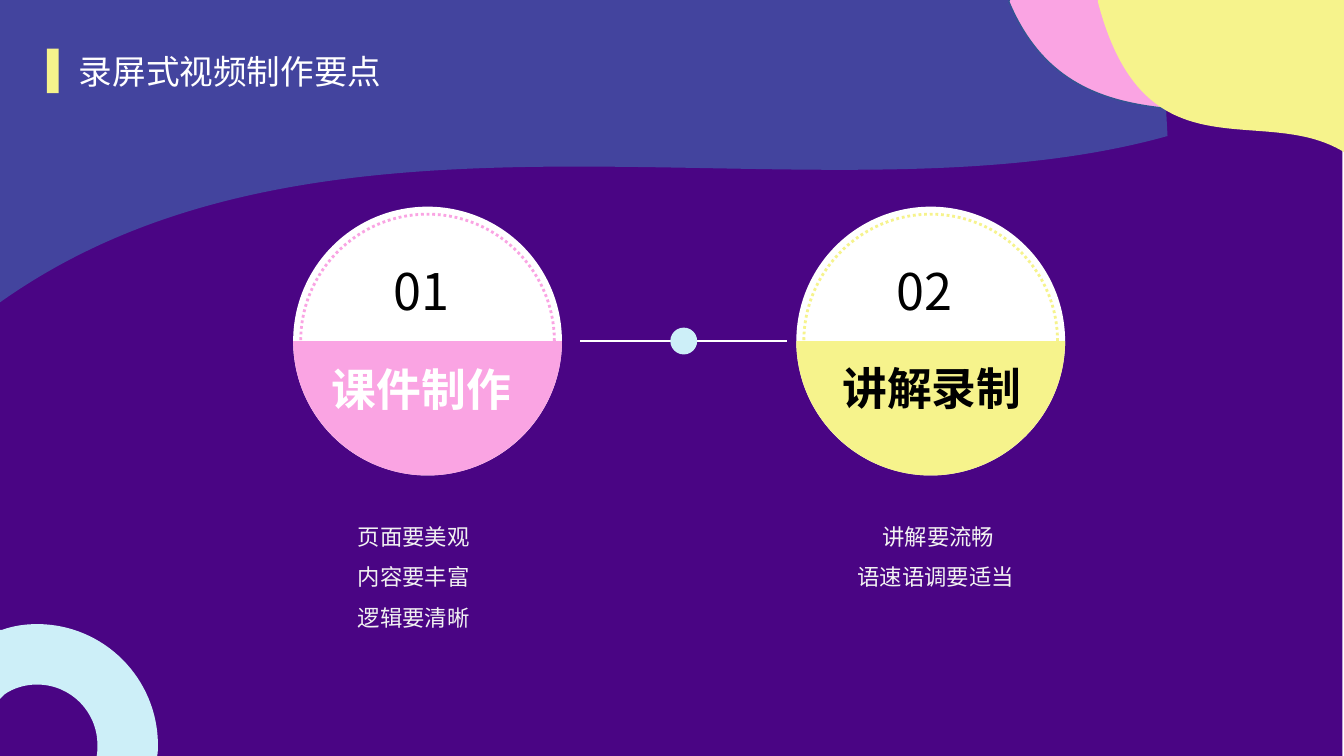
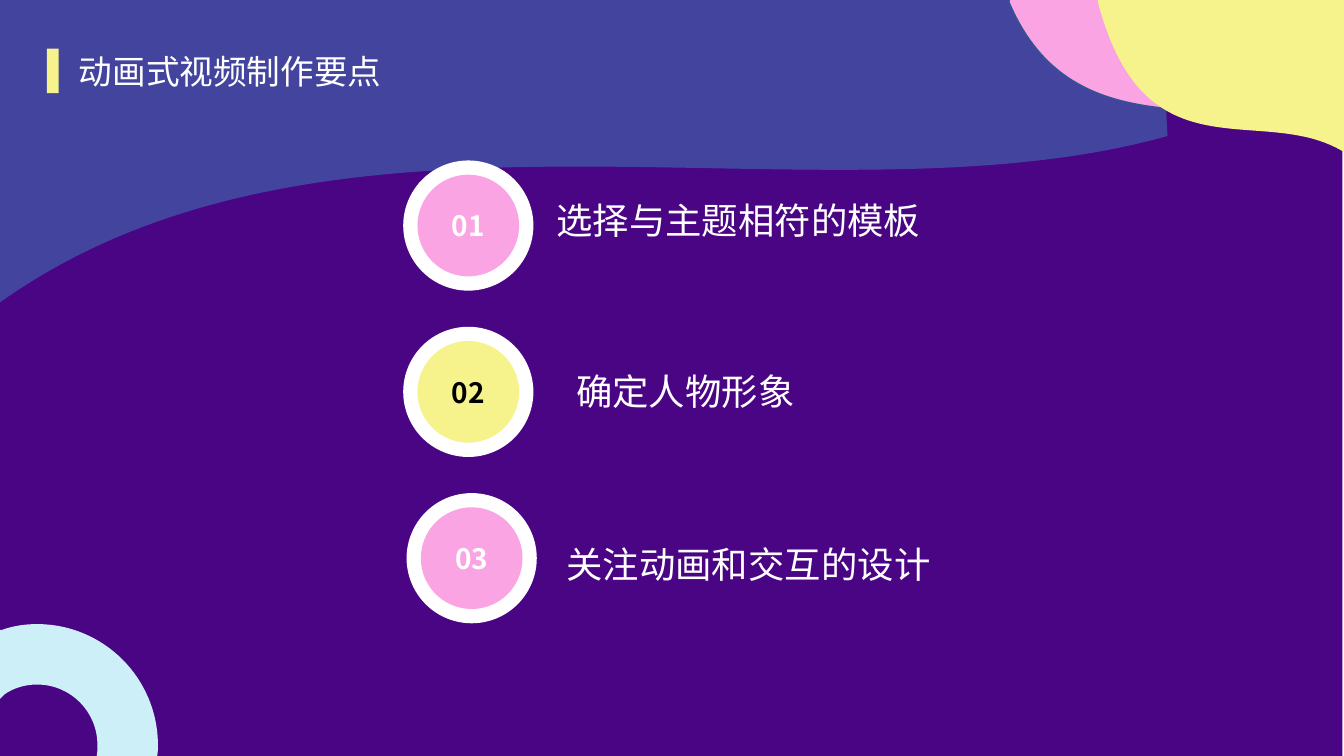
from lxml.etree import SubElement as Sub
from pptx import Presentation
from pptx.dml.color import RGBColor as RGB
from pptx.enum.dml import MSO_LINE as Dash
from pptx.enum.shapes import MSO_CONNECTOR as Link, MSO_SHAPE as Kind
from pptx.enum.text import MSO_ANCHOR as Anchor, MSO_AUTO_SIZE as Fit, PP_ALIGN as Align
from pptx.oxml.ns import qn
from pptx.util import Inches, Pt

WHITE = RGB(0xFF, 0xFF, 0xFF)
BLACK = RGB(0, 0, 0)
PALE = RGB(0xF2, 0xF2, 0xF2)
PURPLE = RGB(0x4A, 0x05, 0x84)
BLUE = RGB(0x43, 0x44, 0x9E)
NAVY = RGB(0x32, 0x54, 0x91)
CYAN = RGB(0xCD, 0xEF, 0xF8)
PINK = RGB(0xFA, 0xA4, 0xE3)
YELLOW = RGB(0xF6, 0xF3, 0x8C)
FONT = "Noto Sans CJK SC"

deck = Presentation()
deck.slide_width = Inches(40 / 3)
deck.slide_height = Inches(7.5)
CELL = deck.slide_width / 16


def draw(slide, form, box=(), fill=None):
    area = [round(n * CELL) for n in box]
    if form is None:
        return slide.shapes.add_textbox(*area)
    if isinstance(form, list):
        dots = [(round(step[i] * CELL), round(step[i + 1] * CELL))
                for step in form for i in range(0, len(step), 2)]
        pen = slide.shapes.build_freeform(*dots[0])
        pen.add_line_segments(dots[1:], close=fill is not None)
        shape = pen.convert_to_shape()
        trail = shape.element.spPr.find(".//" + qn("a:path"))
        nodes = iter(trail.findall(qn("a:lnTo")))
        for step in form[1:]:
            node = next(nodes)
            if len(step) == 6:
                curve = trail.makeelement(qn("a:cubicBezTo"))
                node.addprevious(curve)
                for bend in (node, next(nodes), next(nodes)):
                    curve.append(bend[0])
                    trail.remove(bend)
    else:
        shape = slide.shapes.add_shape(form, *area)
    shape.shadow.inherit = False
    shape.line.fill.background()
    if fill is None:
        shape.fill.background()
    else:
        shape.fill.solid()
        shape.fill.fore_color.rgb = fill
    return shape


def write(frame, lines, size, ink, align=Align.LEFT, bold=False, wrap=True, anchor=Anchor.TOP):
    frame.word_wrap = wrap
    frame.auto_size = Fit.NONE
    frame.vertical_anchor = anchor
    for row, line in enumerate(lines):
        para = frame.add_paragraph() if row else frame.paragraphs[0]
        para.alignment = align
        run = para.add_run()
        run.text = line
        run.font.name = FONT
        run.font.size = Pt(size)
        run.font.bold = bold
        run.font.color.rgb = ink
        Sub(run.font._element, qn("a:ea"), typeface=FONT)


titles = ["录屏式视频制作要点", "动画式视频制作要点"]
slides = []
for text, plan in zip(titles, (3, 5)):
    slide = deck.slides.add_slide(deck.slide_layouts[plan])
    title = slide.shapes.title
    title.left, title.top, title.width, title.height = [
        round(n * CELL) for n in (0.82, 0.54, 3.97, 0.6)]
    write(title.text_frame, [text], 24, WHITE)
    slides.append(slide)
first, last = slides

blobs = [
    (BLUE, [(0, -0.05), (13.81, -0.05), (13.9, 1.62),
            (9.79, 2.77, 3.97, 0.78, 0, 3.6)]),
    (CYAN, [(0.44, 7.43), (1.24, 7.43, 1.88, 8.08, 1.88, 8.87),
            (1.88, 8.92, 1.88, 8.96, 1.87, 9.01), (1.87, 9.06), (1.14, 9.06),
            (1.15, 9.01), (1.16, 8.96, 1.16, 8.92, 1.16, 8.87),
            (1.16, 8.47, 0.84, 8.15, 0.44, 8.15),
            (0.3, 8.15, 0.16, 8.19, 0.05, 8.27), (0, 8.32), (0, 7.5),
            (0.02, 7.5), (0.16, 7.45, 0.3, 7.43, 0.44, 7.43)]),
    (PINK, [(12.04, -0.06), (15.98, -0.06), (15.98, 1.55),
            (14.66, 1.04, 12.78, 1.85, 12.01, 0.02)]),
    (YELLOW, [(13.08, -0.06), (16, -0.06), (16, 1.81),
              (15.02, 1.21, 13.63, 2.16, 13.07, 0.02)]),
]
back = draw(first, Kind.ROUNDED_RECTANGLE, (0, 0, 15.98, 9.01), PURPLE)
back.adjustments[0] = 0
decor = [back]
for fill, track in blobs:
    blob = draw(first, track, fill=fill)
    if fill == PINK:
        blob.line.color.rgb = NAVY
        blob.line.width = Pt(1)
    decor.append(blob)
decor.append(draw(first, Kind.RECTANGLE, (0.56, 0.58, 0.14, 0.53), YELLOW))
tree = deck.slide_master.shapes.element
for rank, item in enumerate(decor):
    item.element.nvSpPr.cNvPr.set("id", str(20 + rank))
    tree.insert(2 + rank, item.element)

parts = [
    ("01", "课件制作", PINK, WHITE, (3.76, 4.25, 2.52, 0.77),
     ["页面要美观", "内容要丰富", "逻辑要清晰"], (4.14, 6.01, 1.75, 1.52), Align.LEFT),
    ("02", "讲解录制", YELLOW, BLACK, (9.88, 4.24, 2.43, 0.77),
     ["讲解要流畅", "语速语调要适当"], (10.09, 6.01, 2.16, 1.03), Align.CENTER),
]
bodies = list(first.placeholders)[1:]
for col, (num, name, tint, ink, spot, lines, area, align) in enumerate(parts):
    left, top, size, mid = 3.49 + 5.99 * col, 2.46, 3.2, 4.06
    axis = left + size / 2
    draw(first, Kind.OVAL, (left, top, size, size), WHITE)
    for reach, fill in ((1.6, tint), (-1.51, None)):
        wide, pull = abs(reach), 0.55 * reach
        side = abs(pull)
        bow = draw(first, [
            (axis + wide, mid),
            (axis + wide, mid + pull, axis + side, mid + reach, axis, mid + reach),
            (axis - side, mid + reach, axis - wide, mid + pull, axis - wide, mid),
        ], fill=fill)
        if fill is None:
            bow.line.color.rgb = tint
            bow.line.width = Pt(2)
            bow.line.dash_style = Dash.ROUND_DOT
    write(draw(first, None, (left + 1.08, 3.04, 1.04, 0.85)).text_frame,
          [num], 36, BLACK, wrap=False)
    write(draw(first, None, spot).text_frame, [name], 32, ink, Align.CENTER, True)
    body = bodies[col]
    body.left, body.top, body.width, body.height = [round(n * CELL) for n in area]
    write(body.text_frame, lines, 16, PALE)
    body.text_frame.paragraphs[0].alignment = align
    for para in body.text_frame.paragraphs:
        para.line_spacing = 1.5
        para.space_before = Pt(0)
        props = para._p.get_or_add_pPr()
        props.set("marL", "0")
        props.set("indent", "0")
        Sub(props, qn("a:buNone"))

ends = [round(n * CELL) for n in (6.91, 4.06, 9.37, 4.06)]
link = first.shapes.add_connector(Link.STRAIGHT, *ends)
link.line.color.rgb = WHITE
link.line.width = Pt(1.5)
Sub(link.element.spPr, qn("a:effectLst"))
draw(first, Kind.OVAL, (7.98, 3.9, 0.32, 0.32), CYAN)

steps = [
    ("01", "选择与主题相符的模板", PINK, WHITE, 4.8, (6.23, 2.3, 4.85, 0.65)),
    ("02", "确定人物形象", YELLOW, BLACK, 4.8, (6.66, 4.34, 2.92, 0.65)),
    ("03", "关注动画和交互的设计", PINK, WHITE, 4.84, (6.35, 6.4, 4.85, 0.65)),
]
for row, (num, label, tint, ink, left, area) in enumerate(steps):
    top = 1.91 + 1.98 * row
    draw(last, Kind.OVAL, (left, top, 1.55, 1.55), WHITE)
    disc = draw(last, Kind.OVAL, (left + 0.17, top + 0.17, 1.21, 1.21), tint)
    write(disc.text_frame, [num], 20, ink, Align.CENTER, True, anchor=Anchor.MIDDLE)
    write(draw(last, None, area).text_frame, [label], 26, WHITE, Align.RIGHT)

deck.save("out.pptx")
